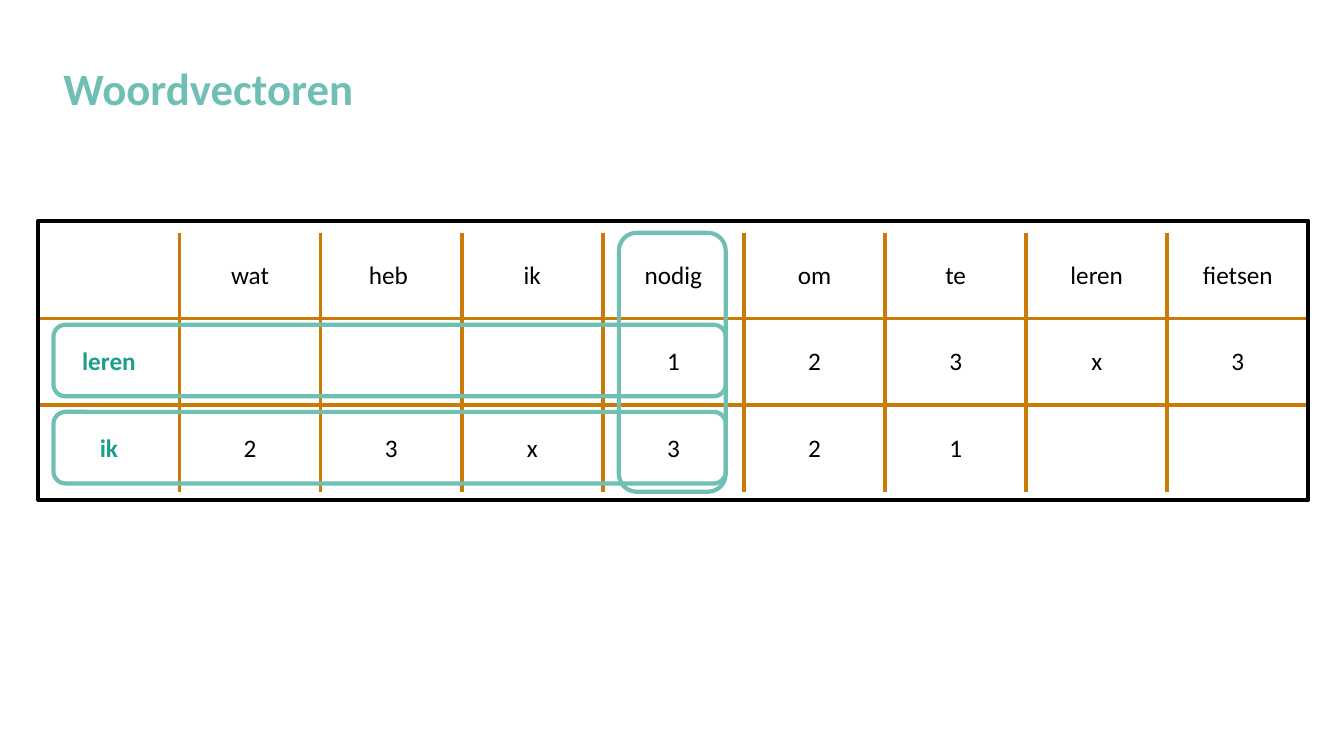
from pptx import Presentation
from pptx.dml.color import RGBColor
from pptx.enum.shapes import MSO_SHAPE
from pptx.enum.text import MSO_ANCHOR, PP_ALIGN
from pptx.oxml import parse_xml
from pptx.oxml.ns import nsdecls
from pptx.util import Pt

GRID_COLOR = "CB7B05"
ACCENT = "6FBFB5"
LEFT, TOP, WIDTH = 27.4, 166.3, 907.2
ROW_HEIGHTS = [61.2, 61.9, 61.9]


def style_font(font, size, color, bold=False):
    font.name = "Calibri"
    font.size = Pt(size)
    font.bold = bold
    font.color.rgb = RGBColor.from_string(color)


def border(side, visible):
    line = f'<a:solidFill><a:srgbClr val="{GRID_COLOR}"/></a:solidFill>' if visible else "<a:noFill/>"
    return parse_xml(f'<a:ln{side} {nsdecls("a")} w="{Pt(3)}">{line}</a:ln{side}>')


prs = Presentation()
prs.slide_width, prs.slide_height = Pt(960), Pt(540)
slide = prs.slides.add_slide(prs.slide_layouts[6])

counts = [
    ["", "wat", "heb ", "ik", "nodig", "om", "te", "leren", "fietsen"],
    ["leren", "", "", "", "1", "2", "3", "x", "3"],
    ["ik", "2", "3", "x", "3", "2", "1", "", ""],
]
last_row, last_col = len(counts) - 1, len(counts[0]) - 1
matrix = slide.shapes.add_table(
    len(counts), len(counts[0]), Pt(LEFT), Pt(TOP), Pt(WIDTH), Pt(sum(ROW_HEIGHTS))
).table
matrix.first_row = matrix.horz_banding = False
for column in matrix.columns:
    column.width = Pt(WIDTH / len(counts[0]))

for r, words in enumerate(counts):
    matrix.rows[r].height = Pt(ROW_HEIGHTS[r])
    for c, word in enumerate(words):
        cell = matrix.cell(r, c)
        cell.vertical_anchor = MSO_ANCHOR.MIDDLE
        inner_sides = {"L": c > 0, "R": c < last_col, "T": r > 0, "B": r < last_row}
        for side, visible in inner_sides.items():
            cell._tc.get_or_add_tcPr().append(border(side, visible))
        cell.fill.background()
        cell.text_frame.text = word
        paragraph = cell.text_frame.paragraphs[0]
        paragraph.alignment = PP_ALIGN.CENTER
        style_font(paragraph.font, 18, "000000")
        for run in paragraph.runs:
            style_font(run.font, 18, "000000" if c else "1B9E8B", c == 0)

title = slide.shapes.add_textbox(Pt(38.2), Pt(39.6), Pt(861.8), Pt(46)).text_frame
title.word_wrap = True
title.text = "Woordvectoren"
style_font(title.paragraphs[0].runs[0].font, 32, ACCENT, True)

outlines = [
    (MSO_SHAPE.RECTANGLE, LEFT, 157.7, WIDTH, 199.4, "000000"),
    (MSO_SHAPE.ROUNDED_RECTANGLE, 442.1, TOP, 76.3, sum(ROW_HEIGHTS), ACCENT),
    (MSO_SHAPE.ROUNDED_RECTANGLE, 38.2, 232, 480.2, 51.1, ACCENT),
    (MSO_SHAPE.ROUNDED_RECTANGLE, 38.2, 294.2, 480.2, 51.1, ACCENT),
]
for kind, left, top, width, height, color in outlines:
    outline = slide.shapes.add_shape(kind, Pt(left), Pt(top), Pt(width), Pt(height))
    outline.shadow.inherit = False
    outline.fill.background()
    outline.line.color.rgb = RGBColor.from_string(color)
    outline.line.width = Pt(3)

prs.save("out.pptx")
